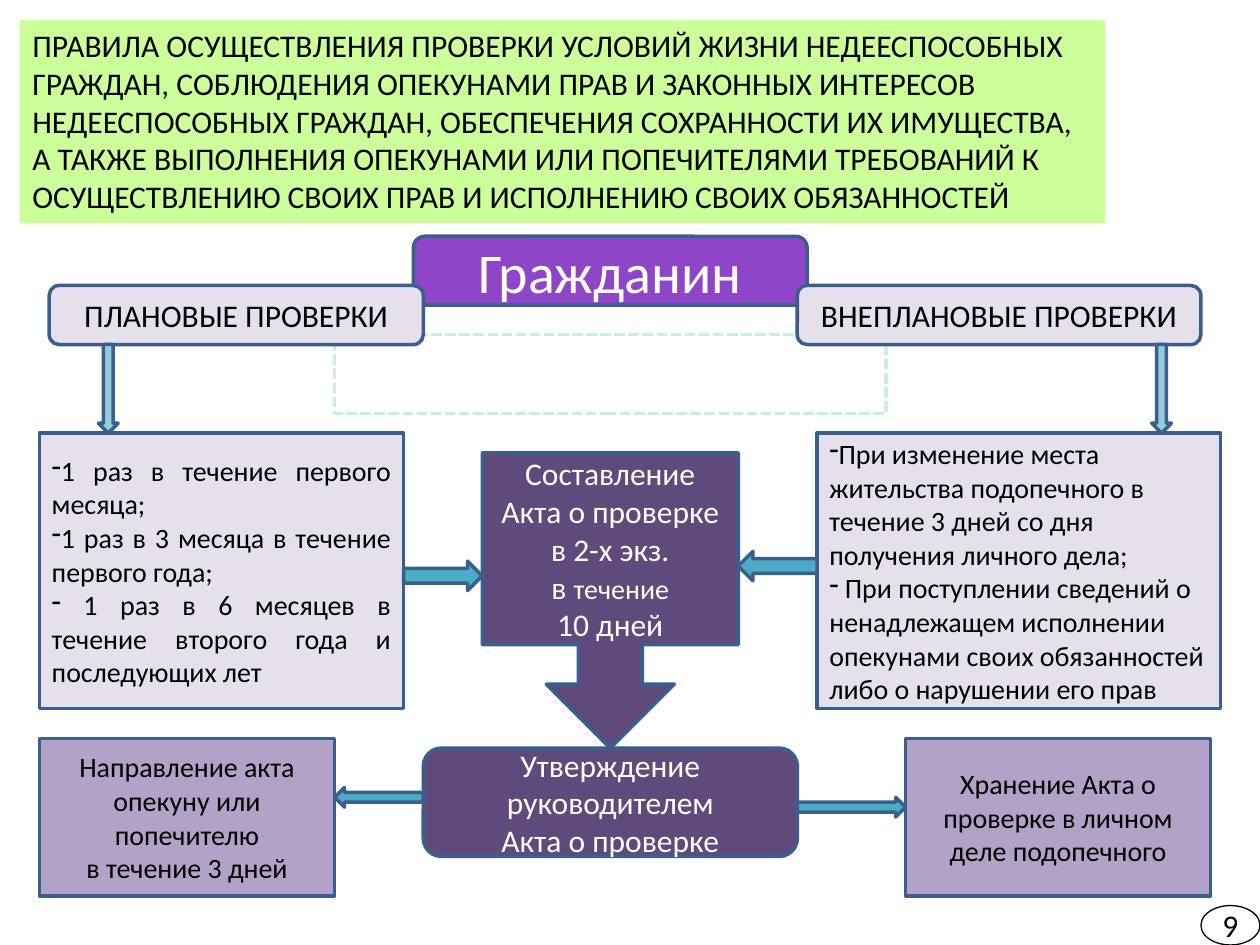
from lxml import etree
from pptx import Presentation
from pptx.dml.color import RGBColor
from pptx.enum.dml import MSO_LINE
from pptx.enum.shapes import MSO_SHAPE
from pptx.enum.text import MSO_ANCHOR, MSO_AUTO_SIZE, PP_ALIGN
from pptx.oxml.ns import qn
from pptx.util import Inches, Pt

RECTANGLE, ROUNDED, OVAL = MSO_SHAPE.RECTANGLE, MSO_SHAPE.ROUNDED_RECTANGLE, MSO_SHAPE.OVAL
DOWN, LEFT, RIGHT = MSO_SHAPE.DOWN_ARROW, MSO_SHAPE.LEFT_ARROW, MSO_SHAPE.RIGHT_ARROW
CALLOUT = MSO_SHAPE.DOWN_ARROW_CALLOUT
ALIGN_LEFT, CENTER, JUSTIFY = PP_ALIGN.LEFT, PP_ALIGN.CENTER, PP_ALIGN.JUSTIFY
TOP, MIDDLE = MSO_ANCHOR.TOP, MSO_ANCHOR.MIDDLE
FIXED_SIZE, DASHED = MSO_AUTO_SIZE.NONE, MSO_LINE.SQUARE_DOT

COLUMNS, ROWS = 128, 96
BLACK, WHITE = "000000", "FFFFFF"
LIME, VIOLET, PLUM = "CCFF99", "8F45C7", "604A7B"
LAVENDER, LILAC = "E6E0EC", "B3A2C7"
TEAL, PALE_TEAL, MINT, NAVY = "4BACC6", "93CDDD", "CCEBEC", "3A5F8C"


def color(value):
    return RGBColor.from_string(value)


class Diagram:
    """Draws on one slide; places are (column, row, columns wide, rows high)."""

    font = "Calibri"

    def __init__(self, presentation):
        self.cell_width = presentation.slide_width / COLUMNS
        self.cell_height = presentation.slide_height / ROWS
        self.slide = presentation.slides.add_slide(presentation.slide_layouts[5])

    def place(self, cells):
        column, row, width, height = cells
        return (round(column * self.cell_width), round(row * self.cell_height),
                round(width * self.cell_width), round(height * self.cell_height))

    def fill_text(self, shape, lines, size, ink, align, anchor=MIDDLE):
        frame = shape.text_frame
        frame.word_wrap = True
        frame.auto_size = FIXED_SIZE
        frame.vertical_anchor = anchor
        frame.text = "\n".join(lines)
        for paragraph in frame.paragraphs:
            paragraph.alignment = align
            for run in paragraph.runs:
                self.style_run(run, size, ink)

    def style_run(self, run, size, ink):
        run.font.name = self.font
        run.font.size = Pt(size)
        run.font.color.rgb = color(ink)

    def title(self, cells, lines):
        title = self.slide.shapes.title
        title.left, title.top, title.width, title.height = self.place(cells)
        title.fill.solid()
        title.fill.fore_color.rgb = color(LIME)
        self.fill_text(title, lines, 18, BLACK, ALIGN_LEFT, TOP)

    def shape(self, kind, cells, fill, line=NAVY, weight=2):
        shape = self.slide.shapes.add_shape(kind, *self.place(cells))
        shape.shadow.inherit = False
        shape.fill.solid()
        shape.fill.fore_color.rgb = color(fill)
        shape.line.color.rgb = color(line)
        shape.line.width = Pt(weight)
        return shape

    def box(self, kind, cells, fill, lines, size=18, ink=BLACK, align=CENTER):
        shape = self.shape(kind, cells, fill)
        self.fill_text(shape, lines, size, ink, align)
        return shape

    def dash_list(self, cells, lines, align):
        shape = self.box(RECTANGLE, cells, LAVENDER, lines, 16, align=align)
        for paragraph in shape.text_frame.paragraphs:
            properties = paragraph._p.get_or_add_pPr()
            etree.SubElement(properties, qn("a:buChar")).set("char", "-")

    def page_number(self, cells, number):
        oval = self.shape(OVAL, cells, WHITE, BLACK, 0.75)
        self.fill_text(oval, [number], 18, BLACK, CENTER)
        oval.text_frame.word_wrap = False


def main():
    presentation = Presentation()
    presentation.slide_width, presentation.slide_height = Inches(10), Inches(7.5)
    diagram = Diagram(presentation)

    # Heading and dashed frame behind the diagram
    diagram.title((2, 2, 110.3, 20.7), [
        "ПРАВИЛА ОСУЩЕСТВЛЕНИЯ ПРОВЕРКИ УСЛОВИЙ ЖИЗНИ НЕДЕЕСПОСОБНЫХ",
        "ГРАЖДАН, СОБЛЮДЕНИЯ ОПЕКУНАМИ ПРАВ И ЗАКОННЫХ ИНТЕРЕСОВ "
        "НЕДЕЕСПОСОБНЫХ ГРАЖДАН, ОБЕСПЕЧЕНИЯ СОХРАННОСТИ ИХ ИМУЩЕСТВА,",
        "А ТАКЖЕ ВЫПОЛНЕНИЯ ОПЕКУНАМИ ИЛИ ПОПЕЧИТЕЛЯМИ ТРЕБОВАНИЙ К "
        "ОСУЩЕСТВЛЕНИЮ СВОИХ ПРАВ И ИСПОЛНЕНИЮ СВОИХ ОБЯЗАННОСТЕЙ"])
    frame = diagram.shape(RECTANGLE, (34, 34, 56, 8), WHITE, MINT)
    frame.line.dash_style = DASHED

    # Citizen and the two kinds of checks
    diagram.box(ROUNDED, (42, 24, 40, 7), VIOLET, ["Гражданин"], 32, WHITE)
    diagram.box(ROUNDED, (5, 29, 38, 6), LAVENDER, ["ПЛАНОВЫЕ ПРОВЕРКИ"])
    diagram.box(ROUNDED, (81, 29, 41, 6), LAVENDER, ["ВНЕПЛАНОВЫЕ ПРОВЕРКИ"])

    # When each check takes place
    diagram.dash_list((83, 44, 41, 28), [
        "При изменение места жительства подопечного в течение 3 дней "
        "со дня получения личного дела;",
        " При поступлении сведений о ненадлежащем исполнении опекунами "
        "своих обязанностей либо о нарушении его прав"], ALIGN_LEFT)
    diagram.dash_list((4, 44, 37, 28), [
        "1 раз в течение первого месяца;",
        "1 раз в 3 месяца в течение первого года;",
        " 1 раз в 6 месяцев в течение второго года и последующих лет"], JUSTIFY)

    # Drawing up and approving the report
    report = diagram.box(CALLOUT, (49, 46, 26, 30), PLUM, [
        "Составление\vАкта о проверке в 2-х экз.", "в ", "10 дней"], ink=WHITE)
    term = report.text_frame.paragraphs[1].add_run()
    term.text = "течение"
    diagram.style_run(term, 16, WHITE)
    diagram.box(ROUNDED, (43, 76, 38, 11), PLUM,
                ["Утверждение руководителем", "Акта о проверке"], ink=WHITE)

    # What happens to the report
    diagram.box(RECTANGLE, (4, 75, 30, 16), LILAC,
                ["Направление акта опекуну или попечителю", "в течение 3 дней"], 16)
    diagram.box(RECTANGLE, (92, 75, 31, 16), LILAC,
                ["Хранение Акта о проверке в личном деле подопечного"], 16)

    # Block arrows between the steps
    for kind, cells, fill in [
            (DOWN, (10, 35, 2, 9), PALE_TEAL),
            (DOWN, (117, 35, 2, 9), PALE_TEAL),
            (LEFT, (75, 56, 8, 3), TEAL),
            (RIGHT, (41, 57, 8, 3), TEAL),
            (RIGHT, (81, 81, 11, 2), TEAL),
            (LEFT, (34, 80, 9, 2), TEAL)]:
        diagram.shape(kind, cells, fill)

    diagram.page_number((122, 92, 6, 4), "9")
    presentation.save("out.pptx")


if __name__ == "__main__":
    main()
